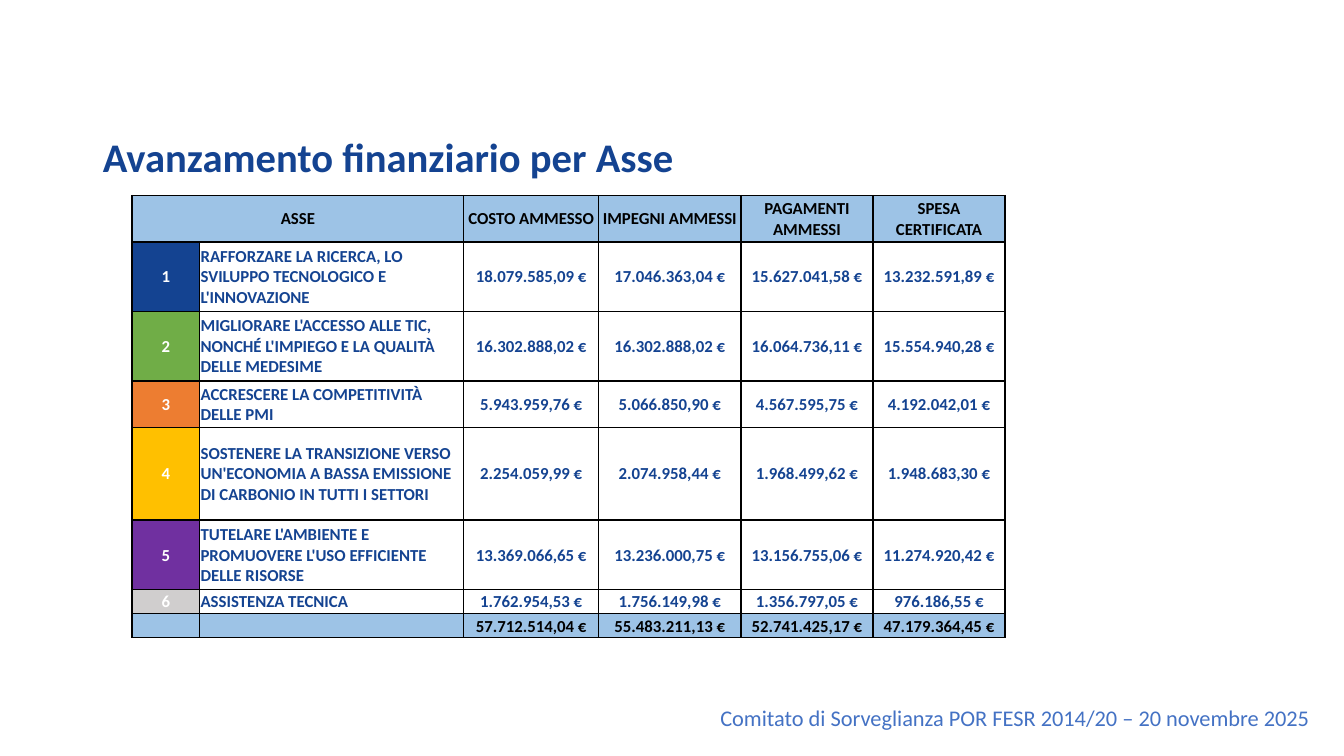
from lxml.etree import SubElement
from pptx import Presentation
from pptx.dml.color import RGBColor
from pptx.enum.text import MSO_ANCHOR, PP_ALIGN
from pptx.oxml import parse_xml
from pptx.oxml.ns import nsdecls, qn
from pptx.util import Inches, Pt

NAVY = RGBColor(0x14, 0x43, 0x91)
GREEN = RGBColor(0x70, 0xAD, 0x47)
ORANGE = RGBColor(0xED, 0x7D, 0x31)
GOLD = RGBColor(0xFF, 0xC0, 0x00)
PURPLE = RGBColor(0x70, 0x30, 0xA0)
GREY = RGBColor(0xD0, 0xCE, 0xCE)
LIGHT_BLUE = RGBColor(0x9D, 0xC3, 0xE6)
FOOTER_BLUE = RGBColor(0x44, 0x72, 0xC4)
BLACK = RGBColor(0, 0, 0)
WHITE = RGBColor(0xFF, 0xFF, 0xFF)

TITLE = "Avanzamento finanziario per Asse"
FOOTER = "Comitato di Sorveglianza POR FESR 2014/20 – 20 novembre 2025"
HEADER = ("ASSE", "", "COSTO AMMESSO", "IMPEGNI AMMESSI", "PAGAMENTI AMMESSI", "SPESA CERTIFICATA")
AXES = [
    (NAVY, "RAFFORZARE LA RICERCA, LO SVILUPPO TECNOLOGICO E L'INNOVAZIONE",
     "18.079.585,09 €", "17.046.363,04 €", "15.627.041,58 €", "13.232.591,89 €"),
    (GREEN, "MIGLIORARE L'ACCESSO ALLE TIC, NONCHÉ L'IMPIEGO E LA QUALITÀ DELLE MEDESIME",
     "16.302.888,02 €", "16.302.888,02 €", "16.064.736,11 €", "15.554.940,28 €"),
    (ORANGE, "ACCRESCERE LA COMPETITIVITÀ DELLE PMI",
     "5.943.959,76 €", "5.066.850,90 €", "4.567.595,75 €", "4.192.042,01 €"),
    (GOLD, "SOSTENERE LA TRANSIZIONE VERSO UN'ECONOMIA A BASSA EMISSIONE DI CARBONIO IN TUTTI I SETTORI",
     "2.254.059,99 €", "2.074.958,44 €", "1.968.499,62 €", "1.948.683,30 €"),
    (PURPLE, "TUTELARE L'AMBIENTE E PROMUOVERE L'USO EFFICIENTE DELLE RISORSE",
     "13.369.066,65 €", "13.236.000,75 €", "13.156.755,06 €", "11.274.920,42 €"),
    (GREY, "ASSISTENZA TECNICA",
     "1.762.954,53 €", "1.756.149,98 €", "1.356.797,05 €", "976.186,55 €"),
]
TOTALS = ("", "", "57.712.514,04 €", "55.483.211,13 €", "52.741.425,17 €", "47.179.364,45 €")
COLUMN_WIDTHS = (0.67, 2.62, 1.34, 1.41, 1.31, 1.31)
ROW_HEIGHTS = (0.46, 0.69, 0.69, 0.46, 0.92, 0.69, 0.24, 0.24)
CELL_FORMAT = {"margin_left": Inches(0.01), "margin_right": Inches(0.01),
               "margin_top": Inches(0.01), "margin_bottom": 0,
               "vertical_anchor": MSO_ANCHOR.MIDDLE}


def write(para, text, color, size, bold, align):
    """Write one formatted run into a paragraph."""
    para.alignment = align
    span = para.add_run()
    span.text = text
    for name, value in {"name": "Calibri", "size": Pt(size), "bold": bold}.items():
        setattr(span.font, name, value)
    span.font.color.rgb = color


def fill_cell(cell, text, color, fill, align):
    """Format a table cell with borders, fill and text."""
    for name, value in CELL_FORMAT.items():
        setattr(cell, name, value)
    properties = cell._tc.get_or_add_tcPr()
    for side in ("lnL", "lnR", "lnT", "lnB"):
        properties.append(parse_xml(
            f'<a:{side} {nsdecls("a")} w="12700"><a:solidFill>'
            f'<a:srgbClr val="{BLACK}"/></a:solidFill></a:{side}>'))
    if fill is None:
        cell.fill.background()
    else:
        cell.fill.solid()
        cell.fill.fore_color.rgb = fill
    para = cell.text_frame.paragraphs[0]
    if text:
        write(para, text, color, 12, True, align)
    else:
        SubElement(para._p, qn("a:endParaRPr"), sz="1200")


def add_title(page):
    """Place the slide title."""
    title = page.shapes.title
    title.left, title.top, title.width, title.height = map(Inches, (0.92, 0.4, 11.5, 1.45))
    frame = title.text_frame
    frame.word_wrap = True
    frame.vertical_anchor = MSO_ANCHOR.BOTTOM
    para = frame.paragraphs[0]
    para.line_spacing = 0.9
    write(para, TITLE, NAVY, 29, True, PP_ALIGN.LEFT)


def add_axis_table(page):
    """Build the table of financial progress by axis."""
    rows = [HEADER]
    rows += [(str(number), *axis[1:]) for number, axis in enumerate(AXES, 1)]
    rows.append(TOTALS)
    table = page.shapes.add_table(
        len(rows), len(HEADER), Inches(1.31), Inches(1.94),
        Inches(sum(COLUMN_WIDTHS)), Inches(sum(ROW_HEIGHTS))).table
    table.first_row = table.horz_banding = False
    for column, width in zip(table.columns, COLUMN_WIDTHS):
        column.width = Inches(width)
    for row, height in zip(table.rows, ROW_HEIGHTS):
        row.height = Inches(height)
    for r, texts in enumerate(rows):
        is_axis = 0 < r <= len(AXES)
        for c, text in enumerate(texts):
            color, fill = (NAVY, None) if is_axis else (BLACK, LIGHT_BLUE)
            if is_axis and c == 0:
                color, fill = WHITE, AXES[r - 1][0]
            align = PP_ALIGN.LEFT if is_axis and c == 1 else PP_ALIGN.CENTER
            fill_cell(table.cell(r, c), text, color, fill, align)
    table.cell(0, 0).merge(table.cell(0, 1))


def add_footer(page):
    """Place the committee line at the bottom right."""
    box = page.shapes.add_textbox(*map(Inches, (5.6, 6.94, 7.54, 0.37)))
    frame = box.text_frame
    frame.word_wrap = True
    frame.margin_right = Inches(0.15)
    write(frame.paragraphs[0], FOOTER, FOOTER_BLUE, 16, False, PP_ALIGN.RIGHT)


def main():
    """Build and save the slide."""
    deck = Presentation()
    deck.slide_width, deck.slide_height = Inches(13.33), Inches(7.5)
    page = deck.slides.add_slide(deck.slide_layouts[5])
    add_title(page)
    add_axis_table(page)
    add_footer(page)
    deck.save("out.pptx")


if __name__ == "__main__":
    main()
